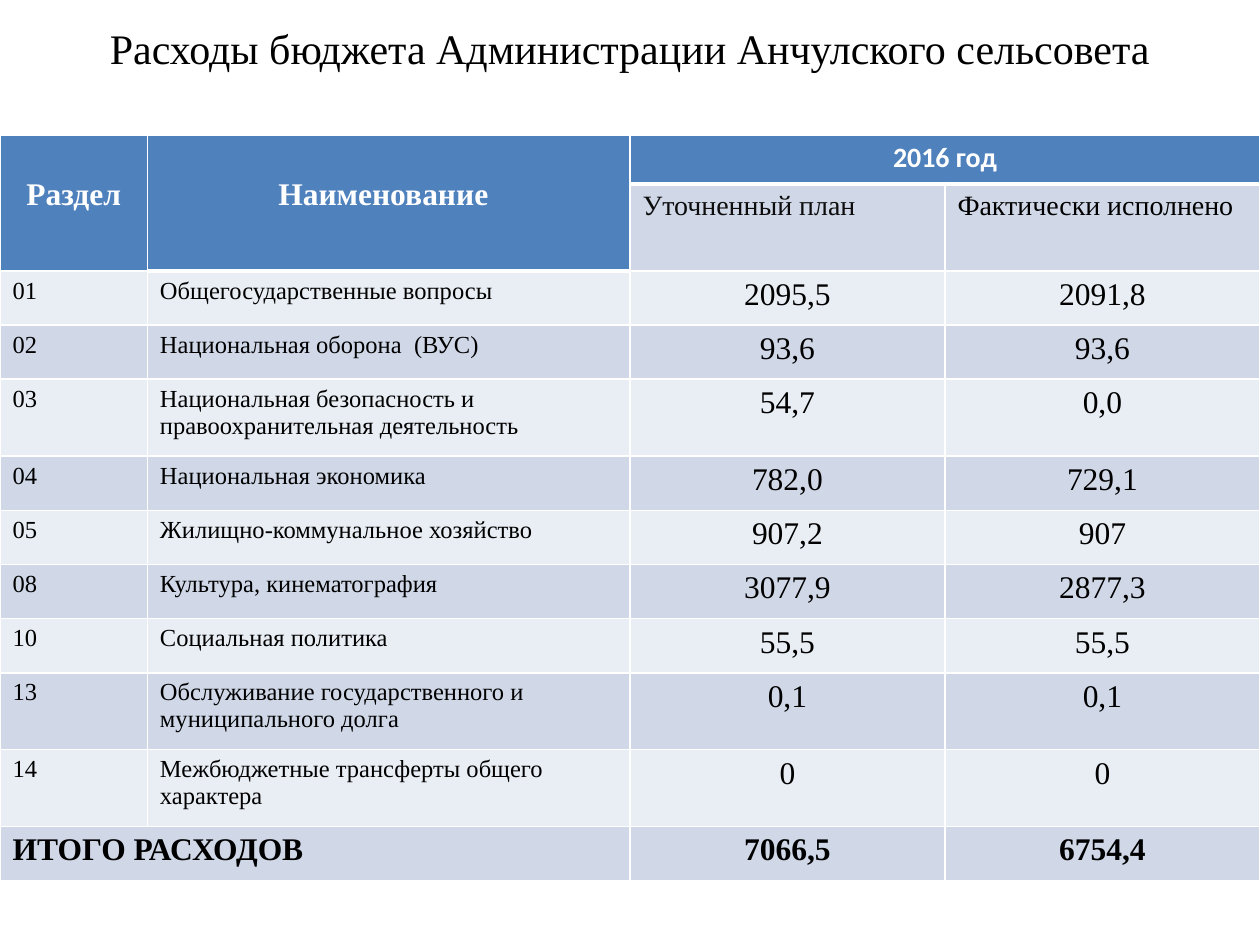
"""Build a slide with a table of village budget spending."""
from dataclasses import dataclass

from lxml.etree import SubElement
from pptx import Presentation
from pptx.dml.color import RGBColor
from pptx.enum.text import MSO_ANCHOR, PP_ALIGN
from pptx.oxml.ns import qn
from pptx.table import Table, _Cell
from pptx.text.text import TextFrame
from pptx.util import Inches, Pt

WHITE = RGBColor(0xFF, 0xFF, 0xFF)
BLACK = RGBColor(0, 0, 0)
GREY = RGBColor(0x0D, 0x0D, 0x0D)
BLUE = RGBColor(0x4F, 0x81, 0xBD)
DARK = RGBColor(0xD0, 0xD8, 0xE8)
LIGHT = RGBColor(0xE9, 0xED, 0xF4)
SERIF = "Times New Roman"
LEFT, MID = PP_ALIGN.LEFT, PP_ALIGN.CENTER
WIDTHS = (1.17, 3.83, 2.5, 2.5)
THICK = {(0, 2), (0, 3), (0, 1), (1, 1)}


@dataclass
class Item:
    code: str
    name: str
    plan: str
    fact: str


ITEMS = [
    Item("01", "Общегосударственные вопросы", "2095,5", "2091,8"),
    Item("02", "Национальная оборона  (ВУС)", "93,6", "93,6"),
    Item("03", "Национальная безопасность и правоохранительная деятельность",
         "54,7", "0,0"),
    Item("04", "Национальная экономика", "782,0", "729,1"),
    Item("05", "Жилищно-коммунальное хозяйство", "907,2", "907"),
    Item("08", "Культура, кинематография", "3077,9", "2877,3"),
    Item("10", "Социальная политика", "55,5", "55,5"),
    Item("13", "Обслуживание государственного и муниципального долга",
         "0,1", "0,1"),
    Item("14", "Межбюджетные трансферты общего характера", "0", "0"),
]
HEIGHTS = [0.39, 0.58,
           *(0.61 if len(item.name) > 35 else 0.43 for item in ITEMS), 0.43]


def write(frame: TextFrame, text: str, *, size: float = 18, font: str = SERIF,
          color: RGBColor = BLACK, bold: bool = False,
          align: PP_ALIGN = LEFT) -> None:
    frame.word_wrap = True
    para = frame.paragraphs[0]
    para.alignment = align
    run = para.add_run()
    run.text = text
    run.font.size, run.font.name, run.font.bold = Pt(size), font, bold
    run.font.color.rgb = color


def edge(cell: _Cell, row: int, col: int) -> None:
    props = cell._tc.get_or_add_tcPr()
    wide = {"T": (row - 1, col) in THICK, "B": (row, col) in THICK}
    for side in "LRTB":
        width = Pt(3 if wide.get(side) else 1)
        line = SubElement(props, qn(f"a:ln{side}"), w=str(width))
        fill = SubElement(line, qn("a:solidFill"))
        SubElement(fill, qn("a:srgbClr"), val=str(WHITE))


def style(table: Table) -> None:
    for col, width in zip(table.columns, WIDTHS):
        col.width = Inches(width)
    for row, height in enumerate(HEIGHTS):
        table.rows[row].height = Inches(height)
        for col in range(len(WIDTHS)):
            cell = table.cell(row, col)
            edge(cell, row, col)
            head = row == 0 or (row == 1 and col < 2)
            cell.fill.solid()
            cell.fill.fore_color.rgb = BLUE if head else DARK if row % 2 else LIGHT


def header(table: Table) -> None:
    code, name, year = (table.cell(0, col) for col in range(3))
    code.merge(table.cell(1, 0))
    name.merge(table.cell(1, 1))
    year.merge(table.cell(0, 3))
    code.margin_top = name.margin_top = Inches(0.34)
    name.margin_left = Inches(1.04)
    write(code.text_frame, "Раздел", color=WHITE, bold=True, align=MID)
    write(name.text_frame, "Наименование", color=WHITE, bold=True)
    write(year.text_frame, "2016 год", size=16, font="Calibri", color=WHITE,
          bold=True, align=MID)
    write(table.cell(1, 2).text_frame, "Уточненный план", size=16, color=GREY)
    write(table.cell(1, 3).text_frame, "Фактически исполнено", size=16)


def body(table: Table) -> None:
    for row, item in enumerate(ITEMS, 2):
        for col, text in enumerate((item.code, item.name)):
            write(table.cell(row, col).text_frame, text, size=14)
        for col, text in enumerate((item.plan, item.fact), 2):
            write(table.cell(row, col).text_frame, text, align=MID)


def total(table: Table) -> None:
    row = len(HEIGHTS) - 1
    table.cell(row, 0).merge(table.cell(row, 1))
    write(table.cell(row, 0).text_frame, "ИТОГО РАСХОДОВ", bold=True)
    for col, text in enumerate(("7066,5", "6754,4"), 2):
        write(table.cell(row, col).text_frame, text, bold=True, align=MID)


def main() -> None:
    deck = Presentation()
    deck.slide_width, deck.slide_height = Inches(10), Inches(7.5)
    slide = deck.slides.add_slide(deck.slide_layouts[6])
    title = slide.shapes.add_textbox(Inches(0.5), 0, Inches(9), Inches(0.76))
    title.text_frame.vertical_anchor = MSO_ANCHOR.MIDDLE
    write(title.text_frame, "Расходы бюджета Администрации Анчулского сельсовета",
          size=24, align=MID)
    table = slide.shapes.add_table(
        len(HEIGHTS), len(WIDTHS), 0, Inches(1.07),
        Inches(sum(WIDTHS)), Inches(sum(HEIGHTS))).table
    style(table)
    header(table)
    body(table)
    total(table)
    deck.save("out.pptx")


if __name__ == "__main__":
    main()
